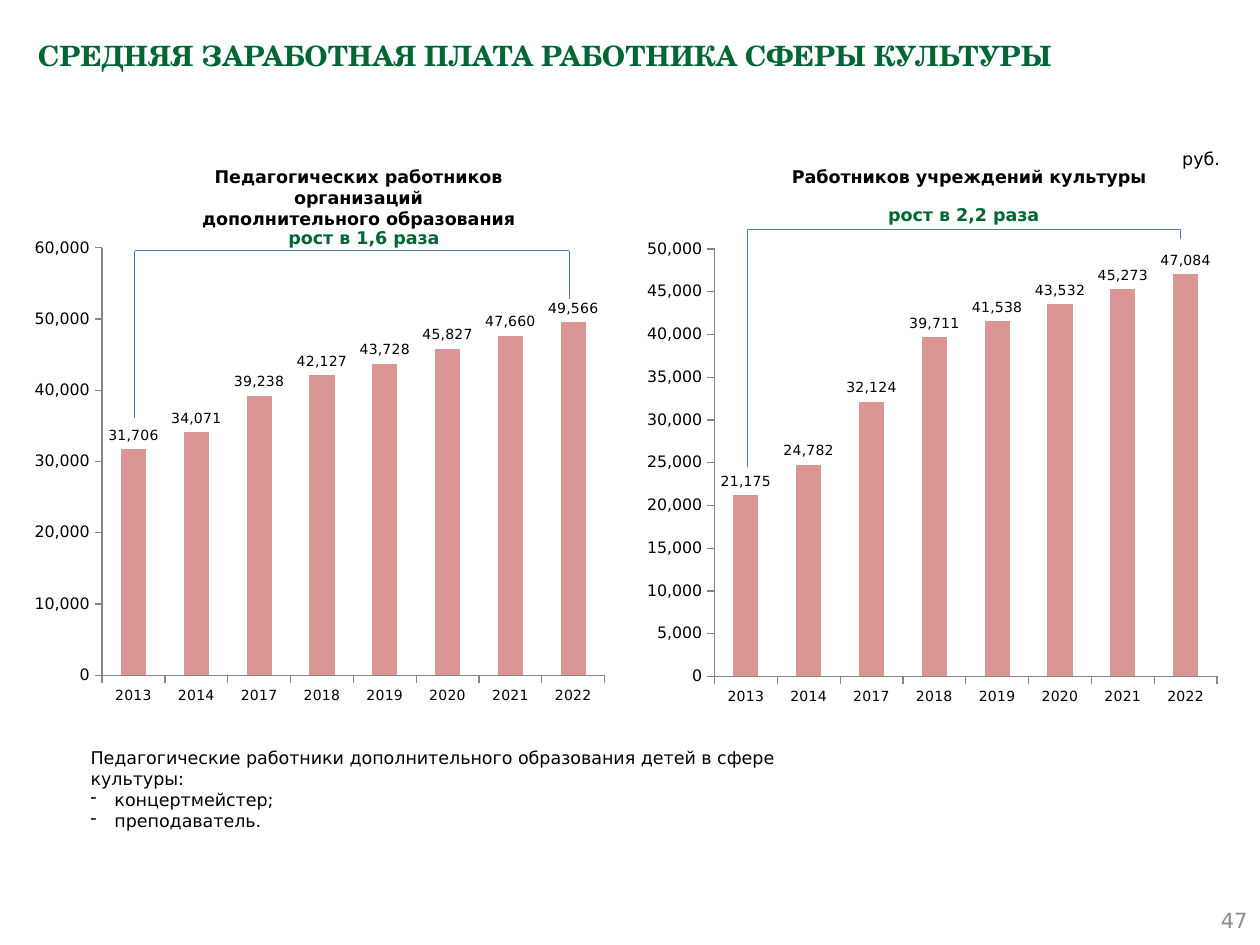
from lxml.etree import SubElement
from pptx import Presentation
from pptx.chart.data import CategoryChartData
from pptx.dml.color import RGBColor
from pptx.enum.chart import XL_CHART_TYPE as ChartType
from pptx.enum.chart import XL_LABEL_POSITION as LabelPos
from pptx.enum.chart import XL_TICK_MARK as Tick
from pptx.enum.shapes import MSO_CONNECTOR as Connector
from pptx.enum.shapes import MSO_SHAPE as Shape
from pptx.enum.text import MSO_ANCHOR as Anchor
from pptx.enum.text import PP_ALIGN as Align
from pptx.oxml import parse_xml
from pptx.oxml.ns import nsdecls, qn
from pptx.util import Inches, Pt

COLORS = {"green": "006633", "black": "000000", "grey": "8C8C8C",
          "bar": "D99694", "bracket": "4B7EBC", "axis": "868686"}
FONT = "DejaVu Sans"
TITLE_FONT = "TeX Gyre Schola"
YEARS = ["2013", "2014", "2017", "2018", "2019", "2020", "2021", "2022"]

# Chart box, values, axis maximum and step, heading, growth note, bracket
# (left, right, top, left end, right end)
PANELS = [
    {"box": (0.18, 1.82, 4.71, 3.86),
     "values": [31706, 34071, 39238, 42127, 43728, 45827, 47660, 49566],
     "scale": (60000, 10000),
     "heading": ["Педагогических работников организаций",
                 "дополнительного образования"],
     "heading_box": (1.07, 1.27, 3.55, 0.44),
     "growth": "рост в 1,6 раза", "growth_box": (2.19, 1.75, 1.41, 0.27),
     "bracket": (1.07, 4.52, 1.99, 3.32, 2.37)},
    {"box": (5.04, 1.83, 4.71, 3.86),
     "values": [21175, 24782, 32124, 39711, 41538, 43532, 45273, 47084],
     "scale": (50000, 5000),
     "heading": ["Работников учреждений культуры"],
     "heading_box": (6.17, 1.27, 3.04, 0.27),
     "growth": "рост в 2,2 раза", "growth_box": (6.95, 1.57, 1.41, 0.27),
     "bracket": (5.93, 9.37, 1.82, 3.71, 1.9)},
]


def rgb(name):
    return RGBColor.from_string(COLORS[name])


def inches(values):
    return [Inches(v) for v in values]


def style_font(font, size, color="black", bold=False, name=FONT):
    font.name, font.size, font.bold = name, Pt(size), bold
    font.color.rgb = rgb(color)


def fill_text(tf, lines, size=10, color="black", bold=False, align=Align.LEFT):
    tf.text = "\n".join(lines)
    for p in tf.paragraphs:
        p.alignment = align
        for r in p.runs:
            style_font(r.font, size, color, bold)


def add_text(slide, box, lines, wrap=False, **style):
    tf = slide.shapes.add_textbox(*inches(box)).text_frame
    tf.word_wrap = wrap
    fill_text(tf, lines, **style)
    return tf


def add_dash(p):
    pPr = p._p.get_or_add_pPr()
    pPr.set("marL", str(Inches(0.19)))
    pPr.set("indent", str(-Inches(0.19)))
    SubElement(pPr, qn("a:buChar")).set("char", "-")


def add_line(slide, x1, y1, x2, y2):
    line = slide.shapes.add_connector(Connector.STRAIGHT,
                                      *inches((x1, y1, x2, y2)))
    line.line.color.rgb = rgb("bracket")
    line.line.width = Pt(0.75)
    SubElement(line._element.spPr, qn("a:effectLst"))


def add_bracket(slide, left, right, top, left_end, right_end):
    add_line(slide, left, top, left, left_end)
    add_line(slide, left, top, right, top)
    add_line(slide, right, top, right, right_end)


def set_plot_layout(chart, **fractions):
    plot_area = chart._chartSpace.chart.plotArea
    for old in plot_area.findall(qn("c:layout")):
        plot_area.remove(old)
    sizes = "".join(f'<c:{k} val="{v}"/>' for k, v in fractions.items())
    plot_area.insert(0, parse_xml(
        f'<c:layout {nsdecls("c")}><c:manualLayout>'
        '<c:layoutTarget val="inner"/><c:xMode val="edge"/>'
        f'<c:yMode val="edge"/>{sizes}</c:manualLayout></c:layout>'))


def add_salary_chart(slide, box, values, scale):
    data = CategoryChartData(number_format="#,##0")
    data.categories = YEARS
    data.add_series("Series 1", values)
    chart = slide.shapes.add_chart(ChartType.COLUMN_CLUSTERED,
                                   *inches(box), data).chart
    style_font(chart.font, 18, name="Calibri")
    chart.has_legend = chart.has_title = False
    set_plot_layout(chart, x=0.134, y=0.038, w=0.847, h=0.879)

    # Axes
    for axis, size in ((chart.category_axis, 8), (chart.value_axis, 9)):
        style_font(axis.tick_labels.font, size)
        axis.has_major_gridlines = False
        axis.major_tick_mark, axis.minor_tick_mark = Tick.OUTSIDE, Tick.NONE
        axis.format.line.color.rgb = rgb("axis")
        axis.format.line.width = Pt(0.75)
    axis = chart.value_axis
    axis.minimum_scale = 0
    axis.maximum_scale, axis.major_unit = scale
    axis.tick_labels.number_format = "#,##0"
    axis.tick_labels.number_format_is_linked = False

    # Bars and their labels
    plot = chart.plots[0]
    plot.gap_width = 150
    plot.vary_by_categories = False
    fill = plot.series[0].format.fill
    fill.solid()
    fill.fore_color.rgb = rgb("bar")
    labels = plot.series[0].data_labels
    labels.show_value = True
    labels.position = LabelPos.OUTSIDE_END
    labels.number_format = "#,##0"
    labels.number_format_is_linked = False
    style_font(labels.font, 8)


def add_title(slide, text):
    title = slide.shapes.title
    title.left, title.top, title.width, title.height = inches(
        (0.2, 0.2, 9.61, 0.79))
    tf = title.text_frame
    tf.text = text
    tf.vertical_anchor = Anchor.TOP
    p = tf.paragraphs[0]
    p.alignment = Align.LEFT
    p.line_spacing = 1.2
    style_font(p.runs[0].font, 16, "green", True, TITLE_FONT)


def add_unit(slide, text):
    sp = slide.shapes.add_shape(Shape.PENTAGON,
                                *inches((8.54, 1.15, 1.24, 0.21)))
    sp.adjustments[0] = 0
    sp.shadow.inherit = False
    sp.fill.background()
    sp.line.fill.background()
    sp.text_frame.vertical_anchor = Anchor.MIDDLE
    fill_text(sp.text_frame, [text], align=Align.RIGHT)


def add_panel(slide, panel):
    add_salary_chart(slide, panel["box"], panel["values"], panel["scale"])
    add_text(slide, panel["heading_box"], panel["heading"],
             bold=True, align=Align.CENTER)
    add_bracket(slide, *panel["bracket"])
    add_text(slide, panel["growth_box"], [panel["growth"]],
             color="green", bold=True)


def main():
    prs = Presentation()
    prs.slide_width, prs.slide_height = Inches(10), Inches(7.5)
    slide = prs.slides.add_slide(prs.slide_layouts[5])

    add_title(slide, "СРЕДНЯЯ ЗАРАБОТНАЯ ПЛАТА РАБОТНИКА СФЕРЫ КУЛЬТУРЫ")
    for panel in PANELS:
        add_panel(slide, panel)
    add_unit(slide, "руб.")

    # Footnote and page number
    note = add_text(slide, (0.62, 5.88, 6.38, 0.78), [
        "Педагогические работники дополнительного образования детей "
        "в сфере культуры:", "концертмейстер;", "преподаватель."], wrap=True)
    for p in note.paragraphs[1:]:
        add_dash(p)
    number = add_text(slide, (7.67, 7.1, 2.33, 0.4), ["47"], wrap=True,
                      size=12, color="grey", align=Align.RIGHT)
    number.vertical_anchor = Anchor.MIDDLE

    prs.save("out.pptx")


if __name__ == "__main__":
    main()
